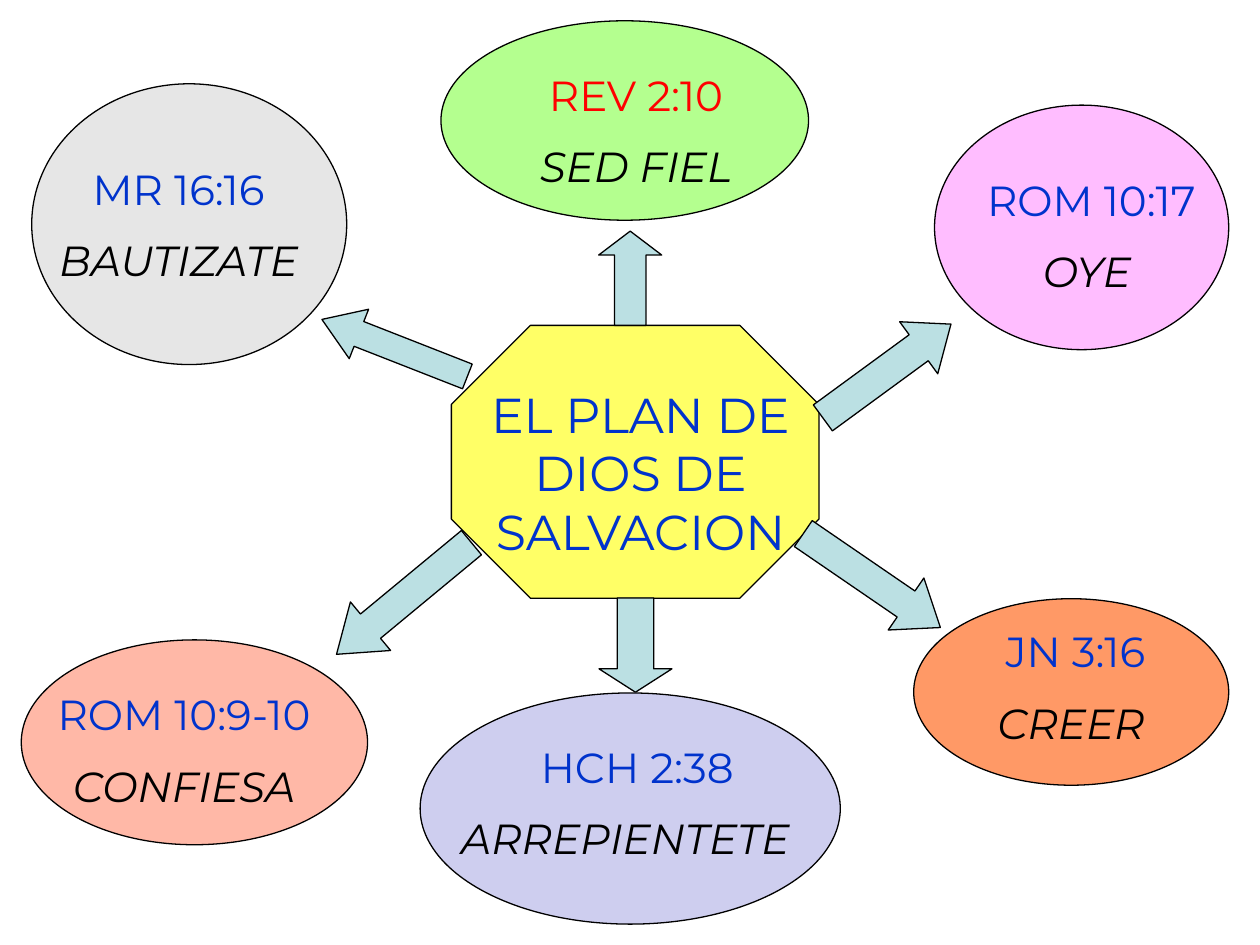
import pptx
import pptx.dml.color
import pptx.enum.shapes
import pptx.enum.text
import pptx.util

Cm, Pt = pptx.util.Cm, pptx.util.Pt
SHAPES = pptx.enum.shapes.MSO_SHAPE
BLUE, BLACK, RED = "0033CC", "000000", "FF0000"

# oval box, oval fill, text box, then (words, colour, indent) of verse and action;
# a negative indent is taken from the right
STEPS = [
    ((0.43, 12.9, 6.98, 4.13), "FFB8A7", (0, 13.76, 6.98, 2.82),
     ("ROM 10:9-10", BLUE, 0.44), ("CONFIESA", BLACK, 0.44)),
    ((18.84, 2.12, 5.93, 4.93), "FFBDFF", (19.05, 3.39, 5.72, 2.82),
     ("ROM 10:17", BLUE, 0.18), ("OYE", BLACK, 0)),
    ((8.47, 13.97, 8.47, 4.66), "CECEEF", (7.83, 14.82, 9.1, 2.82),
     ("HCH 2:38", BLUE, 0.93), ("ARREPIENTETE", BLACK, 0.45)),
    ((18.42, 12.07, 6.35, 3.76), "FF9966", (19.05, 12.49, 5.08, 2.82),
     ("JN 3:16", BLUE, 0.18), ("CREER", BLACK, 0)),
    ((0.64, 1.69, 6.35, 5.66), "E6E6E6", (0.64, 3.17, 6.14, 2.82),
     ("MR 16:16", BLUE, -0.22), ("BAUTIZATE", BLACK, 0)),
    ((8.89, 0.42, 7.41, 4.02), "B4FF8F", (8.89, 1.27, 7.2, 2.82),
     ("REV 2:10", RED, 0.66), ("SED FIEL", BLACK, 0.66)),
]

# preset, box, rotation, head length
ARROWS = [
    (SHAPES.RIGHT_ARROW, (16.28, 6.83, 3.2, 1.3), 323.8, 0.62),
    (SHAPES.RIGHT_ARROW, (15.9, 11.07, 3.35, 1.27), 34.4, 0.66),
    (SHAPES.RIGHT_ARROW, (11.86, 12.27, 1.9, 1.47), 90, 0.32),
    (SHAPES.LEFT_ARROW, (6.38, 11.43, 3.53, 1.27), 320.4, 0.7),
    (SHAPES.LEFT_ARROW, (6.38, 6.48, 3.15, 1.07), 21.4, 0.75),
    (SHAPES.UP_ARROW, (12.07, 4.66, 1.27, 1.9), 0, 0.38),
]


def rgb(hex_string):
    return pptx.dml.color.RGBColor.from_string(hex_string)


class Diagram:
    font_name = "Montserrat"
    outline = BLACK
    outline_width = Pt(0.75)

    def __init__(self, slide):
        self.slide = slide

    def shape(self, preset, box, fill, rotation=0, adjustments=()):
        figure = self.slide.shapes.add_shape(preset, *map(Cm, box))
        figure.shadow.inherit = False
        figure.fill.solid()
        figure.fill.fore_color.rgb = rgb(fill)
        figure.line.color.rgb = rgb(self.outline)
        figure.line.width = self.outline_width
        figure.rotation = rotation
        for index, value in enumerate(adjustments):
            figure.adjustments[index] = value
        return figure

    def text(self, box, lines, size):
        """Stack centred lines of (words, colour, indent); those after the first are italic."""
        frame = self.slide.shapes.add_textbox(*map(Cm, box)).text_frame
        frame.word_wrap = True
        frame.auto_size = pptx.enum.text.MSO_AUTO_SIZE.SHAPE_TO_FIT_TEXT
        for number, (words, colour, indent) in enumerate(lines):
            paragraph = frame.add_paragraph() if number else frame.paragraphs[0]
            paragraph.alignment = pptx.enum.text.PP_ALIGN.CENTER
            if number:
                paragraph.space_before = Pt(size / 2)
            if indent:
                side = "marL" if indent > 0 else "marR"
                paragraph._p.get_or_add_pPr().set(side, str(int(Cm(abs(indent)))))
            run = paragraph.add_run()
            run.text = words
            run.font.color.rgb = rgb(colour)
            font_format = {"name": self.font_name, "size": Pt(size), "italic": number > 0}
            for attribute, value in font_format.items():
                setattr(run.font, attribute, value)


def main():
    presentation = pptx.Presentation()
    presentation.slide_width, presentation.slide_height = Cm(25.4), Cm(19.05)
    diagram = Diagram(presentation.slides.add_slide(presentation.slide_layouts[6]))

    for oval_box, fill, *_ in STEPS:
        diagram.shape(SHAPES.OVAL, oval_box, fill)

    diagram.shape(SHAPES.OCTAGON, (9.1, 6.56, 7.41, 5.5), "FFFF66", adjustments=[0.29])
    plan_title = ("EL PLAN DE DIOS DE SALVACION", BLUE, 0)
    diagram.text((9.31, 7.62, 7.2, 3.84), [plan_title], 28)

    for preset, arrow_box, rotation, head in ARROWS:
        diagram.shape(preset, arrow_box, "BBE0E3", rotation, [0.5, head])

    for _, _, text_box, verse, action in STEPS:
        diagram.text(text_box, [verse, action], 24)

    presentation.save("out.pptx")


if __name__ == "__main__":
    main()
